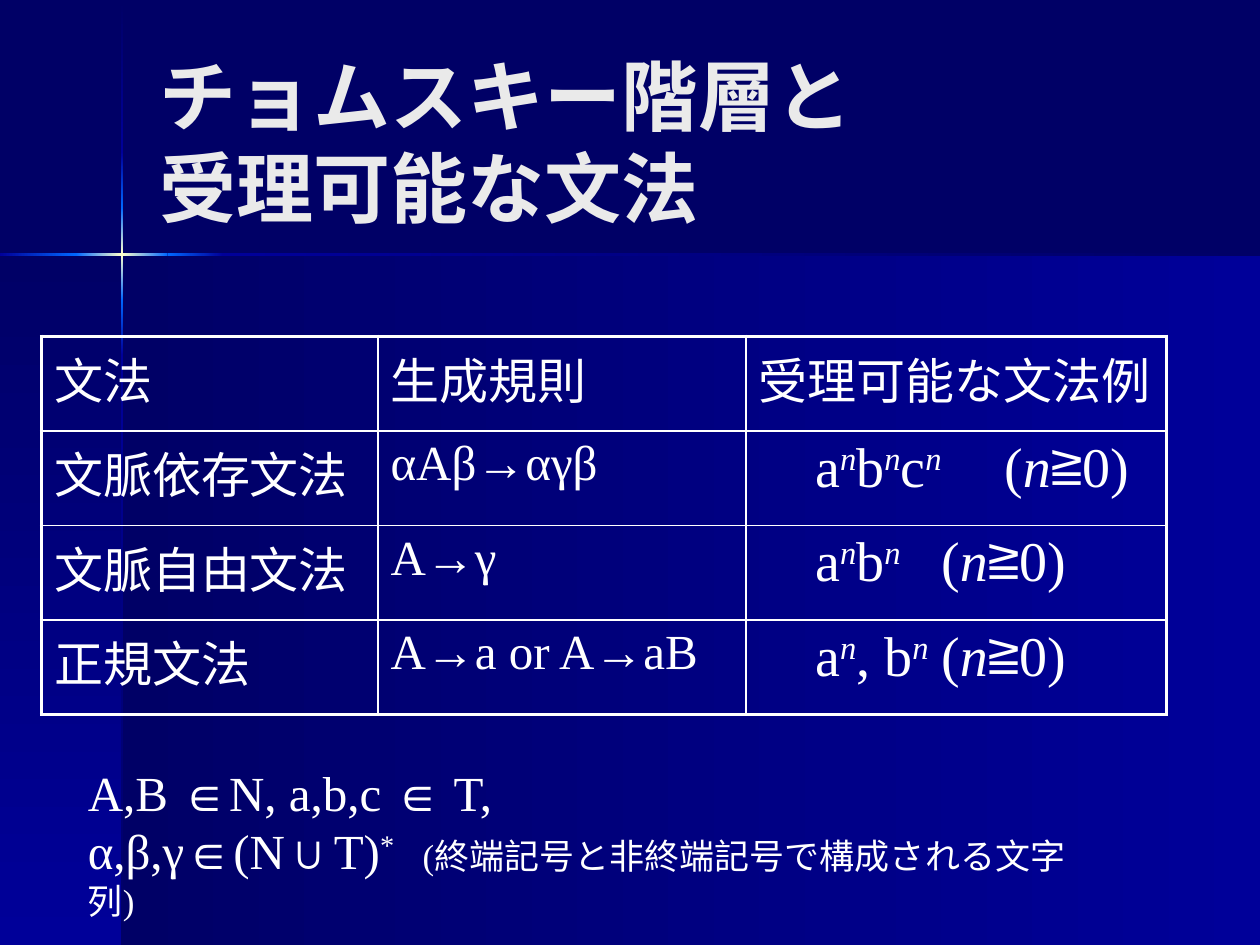
from lxml import etree
from pptx import Presentation
from pptx.dml.color import RGBColor
from pptx.enum.shapes import MSO_SHAPE
from pptx.enum.text import MSO_ANCHOR, MSO_AUTO_SIZE, PP_ALIGN
from pptx.oxml.ns import qn
from pptx.util import Cm, Pt

NAVY, BLUE, BRIGHT, GLOW, WHITE = "000066", "000099", "0066FF", "FFFFCC", "FFFFFF"


def color(hex_text):
    return RGBColor.from_string(hex_text)


def format_run(run, size, hex_text=WHITE, italic=False, superscript=False):
    run.font.name = "Times New Roman"
    run.font.size = Pt(size)
    run.font.color.rgb = color(hex_text)
    run.font.italic = italic
    if superscript:
        run.font._element.set("baseline", "30000")


presentation = Presentation()
presentation.slide_width, presentation.slide_height = Cm(25.4), Cm(19.05)
slide = presentation.slides.add_slide(presentation.slide_layouts[5])
slide.background.fill.solid()
slide.background.fill.fore_color.rgb = color(NAVY)

# Background: two panels, then the vertical and horizontal light beams
panels = [(2.46, 5.13, 22.94, 13.92, False, [NAVY, BLUE]),
          (0, 5.13, 2.46, 13.92, True, [NAVY, BLUE])]
vertical_beam = [(0, 3.07, [NAVY, BLUE]), (7.16, 19.05, [BLUE, NAVY]),
                 (6.05, 7.16, [BRIGHT, BLUE]), (3.07, 4.19, [BLUE, BRIGHT]),
                 (4.19, 6.05, [BRIGHT, GLOW, BRIGHT])]
horizontal_beam = [(4.5, 25.4, [BLUE, NAVY]), (0, 1.53, [BLUE, BRIGHT]),
                   (3.38, 4.5, [BRIGHT, BLUE]), (1.53, 3.38, [BRIGHT, GLOW, BRIGHT])]
for start, end, colors in vertical_beam:
    panels.append((2.44, start, 0.05, end - start, True, colors))
for start, end, colors in horizontal_beam:
    panels.append((start, 5.11, end - start, 0.05, False, colors))

for left, top, width, height, downward, colors in panels:
    shape = slide.shapes.add_shape(MSO_SHAPE.RECTANGLE, Cm(left), Cm(top), Cm(width), Cm(height))
    shape.shadow.inherit = False
    shape.line.fill.background()
    shape.fill.gradient()
    shape.fill.gradient_angle = 270 if downward else 0
    stop_list = shape._element.spPr.find(".//" + qn("a:gsLst"))
    for stop in list(stop_list):
        stop_list.remove(stop)
    for index, hex_text in enumerate(colors):
        position = 100000 * index // (len(colors) - 1)
        stop = etree.SubElement(stop_list, qn("a:gs"), pos=str(position))
        etree.SubElement(stop, qn("a:srgbClr"), val=hex_text)

# Title
title = slide.shapes.title
title.left, title.top, title.width, title.height = Cm(2.97), Cm(0.84), Cm(20.96), Cm(3.99)
title.text_frame.text = "チョムスキー階層と\v受理可能な文法"
title.text_frame.auto_size = MSO_AUTO_SIZE.NONE
title.text_frame.vertical_anchor = MSO_ANCHOR.MIDDLE
paragraph = title.text_frame.paragraphs[0]
paragraph.alignment = PP_ALIGN.LEFT
for run in paragraph.runs:
    format_run(run, 44, "EAEAEA")
    run.font.bold = True

# Table: the last column holds formulas as pieces, where each "n" is italic
condition = ["\t(", "n", "≧0)"]
rows = [("文法", "生成規則", "受理可能な文法例"),
        ("文脈依存文法", "αAβ→αγβ", ["a", "n", "b", "n", "c", "n"] + condition),
        ("文脈自由文法", "A→γ", ["a", "n", "b", "n"] + condition),
        ("正規文法", "A→a or A→aB", ["a", "n", ", b", "n"] + condition)]
column_widths = [6.78, 7.42, 8.47]
table = slide.shapes.add_table(len(rows), len(column_widths), Cm(0.84), Cm(6.78),
                               Cm(sum(column_widths)), Cm(7.62)).table
table.first_row = table.horz_banding = False
for column, width in zip(table.columns, column_widths):
    column.width = Cm(width)

for row_index, row in enumerate(rows):
    for column_index, content in enumerate(row):
        cell = table.cell(row_index, column_index)
        paragraph = cell.text_frame.paragraphs[0]
        if isinstance(content, str):
            paragraph.text = content
            format_run(paragraph.runs[0], 28)
        else:
            # Indent the powers and line up the conditions at a tab stop
            properties = paragraph._p.get_or_add_pPr()
            properties.set("marL", str(Cm(1.14)))
            properties.set("indent", "0")
            tabs = etree.SubElement(properties, qn("a:tabLst"))
            etree.SubElement(tabs, qn("a:tab"), pos=str(Cm(4.27)), algn="l")
            for index, piece in enumerate(content):
                run = paragraph.add_run()
                run.text = piece
                is_power = piece == "n" and index < len(content) - len(condition)
                format_run(run, 32, italic=piece == "n", superscript=is_power)

        # Thick outer frame, thin inner lines
        cell_properties = cell._tc.get_or_add_tcPr()
        outer_sides = {"a:lnL": column_index == 0, "a:lnR": column_index == len(row) - 1,
                       "a:lnT": row_index == 0, "a:lnB": row_index == len(rows) - 1}
        for tag, is_outer in outer_sides.items():
            border = etree.SubElement(cell_properties, qn(tag), w=str(Pt(2.25 if is_outer else 1)))
            border_fill = etree.SubElement(border, qn("a:solidFill"))
            etree.SubElement(border_fill, qn("a:srgbClr"), val=WHITE)
        cell.fill.background()

# Notes on the symbols
text_box = slide.shapes.add_textbox(Cm(1.52), Cm(15.24), Cm(20.98), Cm(2.64))
text_frame = text_box.text_frame
text_frame.word_wrap = True
text_frame.text = "A,B ∈N, a,b,c ∈ T,"
format_run(text_frame.paragraphs[0].runs[0], 28)
paragraph = text_frame.add_paragraph()
for text, size, superscript in [("α,β,γ∈(N∪T)", 28, False), ("*　", 28, True),
                                ("(終端記号と非終端記号で構成される文字列)", 20, False)]:
    run = paragraph.add_run()
    run.text = text
    format_run(run, size, superscript=superscript)

presentation.save("out.pptx")
